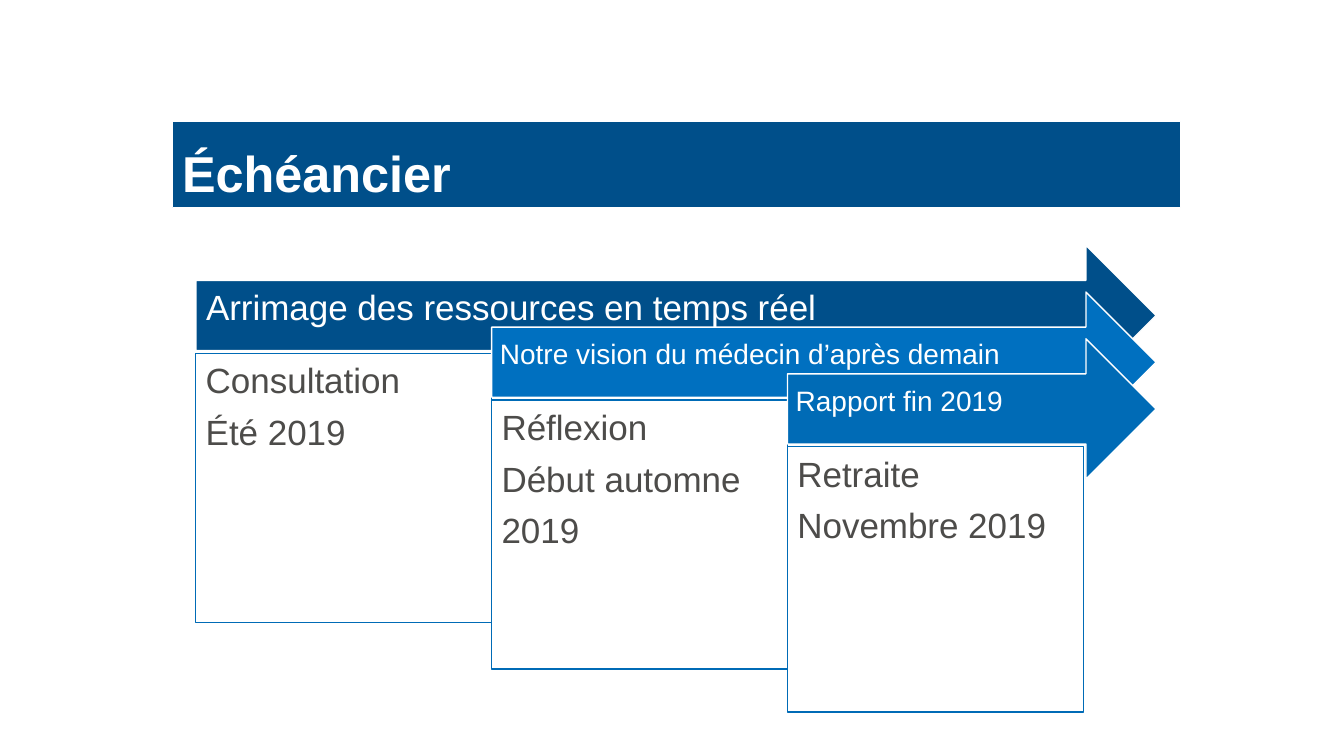
from pptx import Presentation
from pptx.dml.color import RGBColor
from pptx.enum.shapes import MSO_SHAPE as Shape
from pptx.enum.text import MSO_ANCHOR as Anchor, PP_ALIGN as Align
from pptx.util import Pt

COLORS = {
    "navy": "004F8A",
    "bright": "0070C0",
    "blue": "006BB6",
    "white": "FFFFFF",
    "text": "4D4C4A",
}

deck = Presentation()
deck.slide_width, deck.slide_height = Pt(960), Pt(540)
page = deck.slides.add_slide(deck.slide_layouts[6])


def add_block(kind, left, top, width, height, fill, line, line_width=1):
    block = page.shapes.add_shape(kind, Pt(left), Pt(top), Pt(width), Pt(height))
    block.shadow.inherit = False
    block.fill.solid()
    block.fill.fore_color.rgb = RGBColor.from_string(COLORS[fill])
    block.line.color.rgb = RGBColor.from_string(COLORS[line])
    block.line.width = Pt(line_width)
    return block


def write(block, lines, size, color, anchor, insets, space_after=0, bold=False):
    frame = block.text_frame
    frame.word_wrap = True
    frame.vertical_anchor = anchor
    (frame.margin_left, frame.margin_top,
     frame.margin_right, frame.margin_bottom) = [Pt(inset) for inset in insets]
    frame.text = "\n".join(lines)
    for para in frame.paragraphs:
        para.alignment = Align.LEFT
        para.line_spacing = 0.9
        para.space_before = Pt(0)
        para.space_after = Pt(space_after)
        para.font.name = "Arial"
        para.font.size = Pt(size)
        para.font.bold = bold
        para.font.color.rgb = RGBColor.from_string(COLORS[color])


# Staggered steps: each arrow starts one column further right and one step lower
FIRST_LEFT, FIRST_TOP = 139.9, 175.2
COLUMN, DROP = 211.3, 33.4
ARROW_RIGHT, ARROW_HEIGHT, CARD_OFFSET = 825.8, 100.2, 77.1

steps = [
    ("Arrimage des ressources en temps réel", 25, "navy",
     ["Consultation", "Été 2019"], 192.2),
    ("Notre vision du médecin d’après demain", 20, "bright",
     ["Réflexion", "Début automne", "2019"], 192.2),
    ("Rapport fin 2019", 20, "blue",
     ["Retraite", "Novembre 2019"], 189.4),
]

for index, (heading, size, fill, lines, card_height) in enumerate(steps):
    left = FIRST_LEFT + index * COLUMN
    top = FIRST_TOP + index * DROP

    arrow = add_block(Shape.RIGHT_ARROW, left, top, ARROW_RIGHT - left,
                      ARROW_HEIGHT, fill, "white")
    inset = 0.29 * size
    write(arrow, [heading], size, "white", Anchor.MIDDLE,
          (inset, inset, 20, 15.8), space_after=0.4 * size)

    card = add_block(Shape.RECTANGLE, left, top + CARD_OFFSET, COLUMN,
                     card_height, "white", "blue")
    write(card, lines, 25, "text", Anchor.TOP, (7.2,) * 4, space_after=10)

# Title banner
banner = add_block(Shape.RECTANGLE, 123, 86.5, 720, 62, "navy", "white", 0.75)
write(banner, ["Échéancier"], 36, "white", Anchor.BOTTOM,
      (7.2, 3.6, 7.2, 3.6), bold=True)

deck.save("out.pptx")
